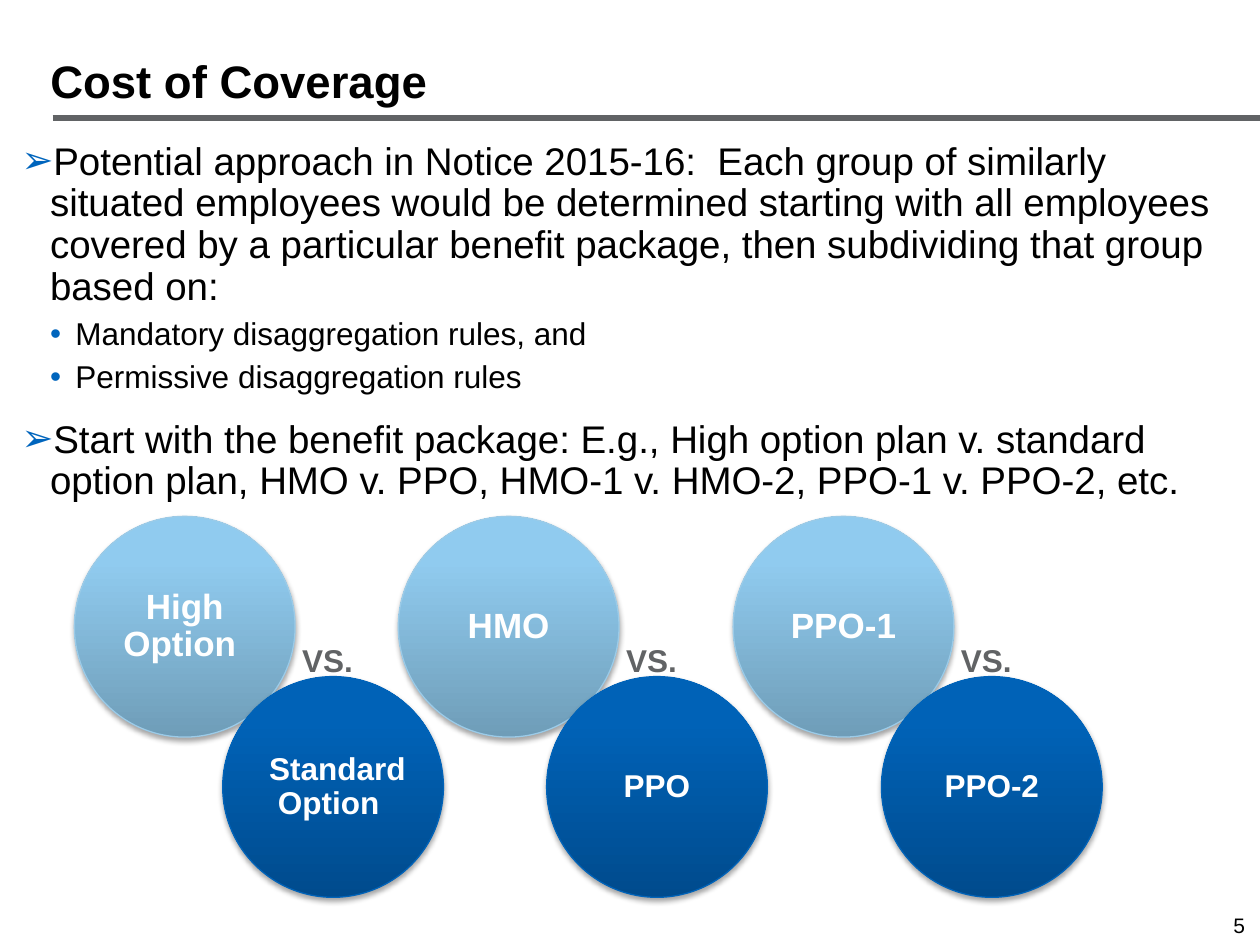
from dataclasses import dataclass

from lxml import etree
from pptx import Presentation
from pptx.dml.color import RGBColor
from pptx.enum.shapes import MSO_CONNECTOR, MSO_SHAPE
from pptx.enum.text import MSO_ANCHOR, MSO_AUTO_SIZE, PP_ALIGN
from pptx.oxml.ns import qn
from pptx.util import Cm, Pt

LEFT, CENTER, RIGHT = PP_ALIGN.LEFT, PP_ALIGN.CENTER, PP_ALIGN.RIGHT
TOP, MIDDLE, BOTTOM = MSO_ANCHOR.TOP, MSO_ANCHOR.MIDDLE, MSO_ANCHOR.BOTTOM
BLACK = RGBColor(0x00, 0x00, 0x00)
WHITE = RGBColor(0xFF, 0xFF, 0xFF)
GRAY = RGBColor(0x61, 0x63, 0x65)
BULLET_BLUE = RGBColor(0x00, 0x65, 0xBD)
FONT = "Arial"
LINE_SPACING = 0.9
DIAMETER = 4.45


@dataclass(frozen=True)
class Bullet:
    text: str
    size: int
    symbol: str
    margin: float
    hanging: float
    space_before: float
    level: int = 0


@dataclass(frozen=True)
class CircleStyle:
    stops: tuple[tuple[int, RGBColor], ...]
    outline: RGBColor
    text_size: int


@dataclass(frozen=True)
class Comparison:
    left: float
    first: str
    second: str


LIGHT = CircleStyle(
    ((0, RGBColor(0x6F, 0x9D, 0xB8)), (80, RGBColor(0x90, 0xCB, 0xEF)),
     (100, RGBColor(0x8F, 0xCD, 0xF2))),
    RGBColor(0x9B, 0xCB, 0xE8), 20)
DARK = CircleStyle(
    ((0, RGBColor(0x00, 0x4B, 0x8D)), (80, RGBColor(0x00, 0x62, 0xB7)),
     (100, RGBColor(0x00, 0x62, 0xB8))),
    RGBColor(0x00, 0x63, 0xB9), 18)

BULLETS = (
    Bullet("Potential approach in Notice 2015-16:  Each group of similarly situated "
           "employees would be determined starting with all employees covered by a "
           "particular benefit package, then subdividing that group based on:",
           22, "➢", 0.58, 0.58, 0),
    Bullet("Mandatory disaggregation rules, and", 18, "•", 1.09, 0.51, 5.5, 1),
    Bullet("Permissive disaggregation rules", 18, "•", 1.09, 0.51, 5.5, 1),
    Bullet("Start with the benefit package: E.g., High option plan v. standard option "
           "plan, HMO v. PPO, HMO-1 v. HMO-2, PPO-1 v. PPO-2, etc.",
           22, "➢", 0.58, 0.58, 14),
)
COMPARISONS = (
    Comparison(1.5, "High Option ", " Standard Option "),
    Comparison(8.03, " HMO ", "PPO"),
    Comparison(14.78, "PPO-1", "PPO-2"),
)


def add_run(paragraph, text: str, size: int, color: RGBColor, bold: bool = False) -> None:
    run = paragraph.add_run()
    run.text = text
    run.font.name = FONT
    run.font.size = Pt(size)
    run.font.bold = bold
    run.font.color.rgb = color


def add_text_box(slide, left: float, top: float, width: float, height: float,
                 anchor=TOP):
    text_box = slide.shapes.add_textbox(Cm(left), Cm(top), Cm(width), Cm(height))
    text_box.text_frame.word_wrap = True
    text_box.text_frame.vertical_anchor = anchor
    return text_box.text_frame


def add_title(slide, text: str) -> None:
    title = slide.shapes.title
    title.left, title.top, title.width, title.height = Cm(0.76), Cm(0.2), Cm(24.2), Cm(2.11)
    frame = title.text_frame
    frame.auto_size = MSO_AUTO_SIZE.NONE
    frame.vertical_anchor = BOTTOM
    paragraph = frame.paragraphs[0]
    paragraph.alignment = LEFT
    paragraph.line_spacing = LINE_SPACING
    add_run(paragraph, text, 26, BLACK, True)


def add_rule(slide) -> None:
    rule = slide.shapes.add_connector(
        MSO_CONNECTOR.STRAIGHT, Cm(1.06), Cm(2.38), Cm(25.4), Cm(2.38))
    rule.line.color.rgb = GRAY
    rule.line.width = Pt(3)
    etree.SubElement(rule._element.spPr, qn("a:effectLst"))


def add_bullets(slide, bullets: tuple[Bullet, ...]) -> None:
    frame = add_text_box(slide, 0.18, 2.74, 24.77, 14.6)
    for index, bullet in enumerate(bullets):
        paragraph = frame.add_paragraph() if index else frame.paragraphs[0]
        paragraph.level = bullet.level
        paragraph.line_spacing = LINE_SPACING
        paragraph.space_before = Pt(bullet.space_before)
        properties = paragraph._p.get_or_add_pPr()
        properties.set("marL", str(Cm(bullet.margin)))
        properties.set("indent", str(-Cm(bullet.hanging)))
        color = etree.SubElement(properties, qn("a:buClr"))
        etree.SubElement(color, qn("a:srgbClr"), val=str(BULLET_BLUE))
        etree.SubElement(properties, qn("a:buFont"), typeface=FONT)
        etree.SubElement(properties, qn("a:buChar"), char=bullet.symbol)
        add_run(paragraph, bullet.text, bullet.size, BLACK)


def set_gradient(shape, stops: tuple[tuple[int, RGBColor], ...]) -> None:
    """Fill from bottom to top with any number of stops."""
    shape.fill.gradient()
    gradient = shape._element.spPr.find(qn("a:gradFill"))
    for child in list(gradient):
        gradient.remove(child)
    stop_list = etree.SubElement(gradient, qn("a:gsLst"))
    for position, color in stops:
        stop = etree.SubElement(stop_list, qn("a:gs"), pos=str(position * 1000))
        etree.SubElement(stop, qn("a:srgbClr"), val=str(color))
    etree.SubElement(gradient, qn("a:lin"), ang=str(270 * 60000), scaled="0")


def set_soft_shadow(shape) -> None:
    shape.shadow.inherit = False
    effects = shape._element.spPr.find(qn("a:effectLst"))
    shadow = etree.SubElement(
        effects, qn("a:outerShdw"), blurRad=str(Pt(3.1)), dist=str(Pt(1.8)),
        dir=str(90 * 60000), rotWithShape="0")
    color = etree.SubElement(shadow, qn("a:srgbClr"), val=str(BLACK))
    etree.SubElement(color, qn("a:alpha"), val="35000")


def add_circle(slide, left: float, top: float, text: str, style: CircleStyle) -> None:
    circle = slide.shapes.add_shape(
        MSO_SHAPE.OVAL, Cm(left), Cm(top), Cm(DIAMETER), Cm(DIAMETER))
    set_gradient(circle, style.stops)
    circle.line.color.rgb = style.outline
    circle.line.width = Pt(0.75)
    set_soft_shadow(circle)
    frame = circle.text_frame
    frame.word_wrap = True
    frame.vertical_anchor = MIDDLE
    frame.margin_left = frame.margin_right = Cm(0.03)
    paragraph = frame.paragraphs[0]
    paragraph.alignment = CENTER
    paragraph.line_spacing = LINE_SPACING
    add_run(paragraph, text, style.text_size, WHITE, True)


def add_comparison(slide, comparison: Comparison) -> None:
    add_circle(slide, comparison.left, 10.41, comparison.first, LIGHT)
    add_circle(slide, comparison.left + 2.99, 13.64, comparison.second, DARK)
    paragraph = add_text_box(slide, comparison.left + 4.05, 12.8, 2.11, 1.02).paragraphs[0]
    paragraph.alignment = CENTER
    add_run(paragraph, "VS.", 18, GRAY, True)


def add_slide_number(slide, number: str) -> None:
    paragraph = add_text_box(slide, 23.83, 18.36, 1.52, 0.64, MIDDLE).paragraphs[0]
    paragraph.alignment = RIGHT
    paragraph.line_spacing = LINE_SPACING
    add_run(paragraph, number, 12, BLACK)


def main() -> None:
    presentation = Presentation()
    presentation.slide_width, presentation.slide_height = Cm(25.4), Cm(19.05)
    slide = presentation.slides.add_slide(presentation.slide_layouts[5])
    add_slide_number(slide, "5")
    add_rule(slide)
    add_bullets(slide, BULLETS)
    add_title(slide, "Cost of Coverage")
    for comparison in COMPARISONS:
        add_comparison(slide, comparison)
    presentation.save("out.pptx")


if __name__ == "__main__":
    main()
